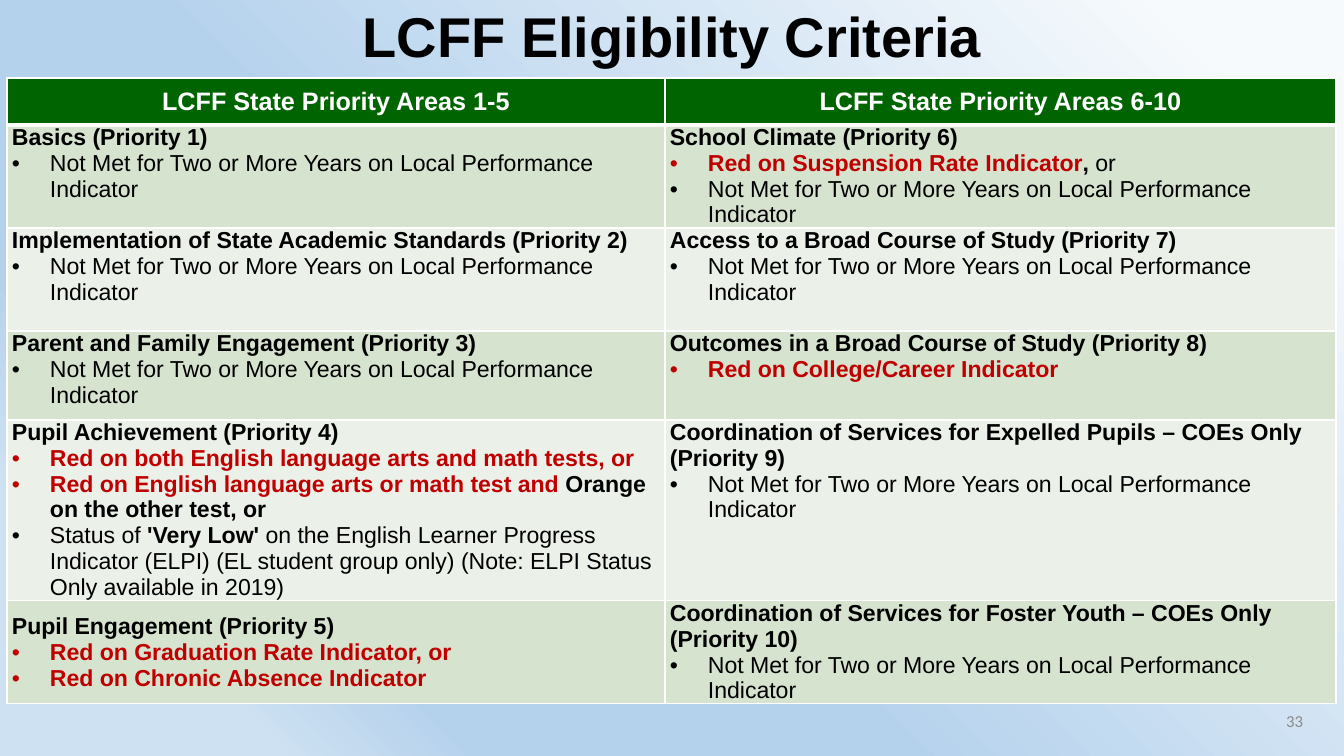
from dataclasses import dataclass

from lxml.etree import SubElement
from pptx import Presentation
from pptx.dml.color import RGBColor
from pptx.enum.text import MSO_ANCHOR as Anchor, PP_ALIGN as Align
from pptx.oxml import parse_xml
from pptx.oxml.ns import nsdecls, qn
from pptx.util import Emu, Pt

COLORS = {
    "black": "000000", "white": "FFFFFF", "red": "C00000", "gray": "8C8C8C",
    "header": "006500", "band": "D5E3CF", "plain": "EBF1E9",
}
BACKGROUND_STOPS = [(8, "F7FAFD"), (57, "B5D2EC"), (77, "B5D2EC"), (87, "CEE1F2")]
COLUMNS = [658, 671]
ROWS = [47, 103, 103, 89, 181, 103]
HEADERS = ["LCFF State Priority Areas 1-5", "LCFF State Priority Areas 6-10"]
INDENT = 38


@dataclass(frozen=True)
class Run:
    text: str
    color: str = "black"
    bold: bool = False


@dataclass(frozen=True)
class Priority:
    title: str
    bullets: list[list[Run]]
    anchor: Anchor = Anchor.TOP


def px(n: int) -> Emu:
    return Emu(round(n * 914400 / 100.8))


def red(text: str) -> Run:
    return Run(text, "red", True)


NOT_MET = [Run("Not Met for Two or More Years on Local Performance Indicator")]
PRIORITIES = [
    (Priority("Basics (Priority 1)", [NOT_MET]),
     Priority("School Climate (Priority 6)", [
         [red("Red on Suspension Rate Indicator"), Run(", ", bold=True), Run("or")],
         NOT_MET])),
    (Priority("Implementation of State Academic Standards (Priority 2)", [NOT_MET]),
     Priority("Access to a Broad Course of Study (Priority 7)", [NOT_MET])),
    (Priority("Parent and Family Engagement (Priority 3)", [NOT_MET]),
     Priority("Outcomes in a Broad Course of Study (Priority 8)",
              [[red("Red on College/Career Indicator")]])),
    (Priority("Pupil Achievement (Priority 4)", [
        [red("Red on both English language arts and math tests, or")],
        [red("Red on English language arts or math test and"),
         Run(" Orange on the other test, or", bold=True)],
        [Run("Status of "), Run("'Very Low' ", bold=True),
         Run("on the English Learner Progress Indicator (ELPI) (EL student group only) "
             "(Note: ELPI Status Only available in 2019)")]]),
     Priority("Coordination of Services for Expelled Pupils – COEs Only (Priority 9)",
              [NOT_MET])),
    (Priority("Pupil Engagement (Priority 5)", [
        [red("Red on Graduation Rate Indicator, or")],
        [red("Red on Chronic Absence Indicator")]], Anchor.MIDDLE),
     Priority("Coordination of Services for Foster Youth – COEs Only (Priority 10)",
              [NOT_MET])),
]


def add_text(p, text: str, *, size: float = 16.5, color: str = "black",
             bold: bool = False, font: str = "Arial", align=None) -> None:
    if align is not None:
        p.alignment = align
    r = p.add_run()
    r.text = text
    r.font.name = font
    r.font.size = Pt(size)
    r.font.bold = bold
    r.font.color.rgb = RGBColor.from_string(COLORS[color])


def add_bullet(p) -> None:
    pPr = p._p.get_or_add_pPr()
    pPr.set("marL", str(px(INDENT)))
    pPr.set("indent", str(-px(INDENT)))
    SubElement(pPr, qn("a:buFont"), typeface="Arial")
    SubElement(pPr, qn("a:buChar"), char="•")


def set_background(slide) -> None:
    stops = "".join(f'<a:gs pos="{pos * 1000}"><a:srgbClr val="{color}"/></a:gs>'
                    for pos, color in BACKGROUND_STOPS)
    bg = parse_xml(
        f'<p:bg {nsdecls("p", "a")}><p:bgPr><a:gradFill rotWithShape="1">'
        f'<a:gsLst>{stops}</a:gsLst><a:lin ang="8100000" scaled="1"/></a:gradFill>'
        '<a:effectLst/></p:bgPr></p:bg>')
    slide._element.cSld.insert(0, bg)


def format_cell(cell, row: int, fill: str, anchor: Anchor) -> None:
    cell.margin_left = cell.margin_right = px(5)
    cell.margin_top = cell.margin_bottom = 0
    cell.vertical_anchor = anchor
    thick = {0: "lnB", 1: "lnT"}.get(row)
    for side in ("lnL", "lnR", "lnT", "lnB"):
        width = Pt(3 if side == thick else 1)
        ln = SubElement(cell._tc.get_or_add_tcPr(), qn(f"a:{side}"), w=str(width))
        SubElement(SubElement(ln, qn("a:solidFill")), qn("a:srgbClr"),
                   val=COLORS["white"])
    cell.fill.solid()
    cell.fill.fore_color.rgb = RGBColor.from_string(COLORS[fill])


def fill_priority(cell, priority: Priority) -> None:
    tf = cell.text_frame
    add_text(tf.paragraphs[0], priority.title, bold=True)
    for bullet in priority.bullets:
        p = tf.add_paragraph()
        add_bullet(p)
        for run in bullet:
            add_text(p, run.text, color=run.color, bold=run.bold)


def add_priority_table(slide) -> None:
    table = slide.shapes.add_table(len(ROWS), len(COLUMNS), px(7), px(78),
                                   px(sum(COLUMNS)), px(sum(ROWS))).table
    table.horz_banding = False
    for column, width in zip(table.columns, COLUMNS):
        column.width = px(width)
    for row, height in zip(table.rows, ROWS):
        row.height = px(height)
    for col, header in enumerate(HEADERS):
        cell = table.cell(0, col)
        format_cell(cell, 0, "header", Anchor.MIDDLE)
        add_text(cell.text_frame.paragraphs[0], header, size=18, color="white",
                 bold=True, align=Align.CENTER)
    for row, pair in enumerate(PRIORITIES, start=1):
        for col, priority in enumerate(pair):
            cell = table.cell(row, col)
            format_cell(cell, row, "band" if row % 2 else "plain", priority.anchor)
            fill_priority(cell, priority)


def add_title(slide) -> None:
    sp = slide.shapes.title
    sp.left, sp.top, sp.width, sp.height = px(0), px(0), px(1344), px(78)
    tf = sp.text_frame
    tf.vertical_anchor = Anchor.MIDDLE
    p = tf.paragraphs[0]
    p.line_spacing = 0.9
    add_text(p, "LCFF Eligibility Criteria", size=40, bold=True, align=Align.CENTER)


def add_page_number(slide) -> None:
    tf = slide.shapes.add_textbox(px(1011), px(701), px(302), px(40)).text_frame
    tf.word_wrap = True
    tf.vertical_anchor = Anchor.MIDDLE
    add_text(tf.paragraphs[0], "33", size=12, color="gray", font="Calibri",
             align=Align.RIGHT)


def main() -> None:
    prs = Presentation()
    prs.slide_width, prs.slide_height = px(1344), px(756)
    slide = prs.slides.add_slide(prs.slide_layouts[5])
    set_background(slide)
    add_title(slide)
    add_priority_table(slide)
    add_page_number(slide)
    prs.save("out.pptx")


if __name__ == "__main__":
    main()
